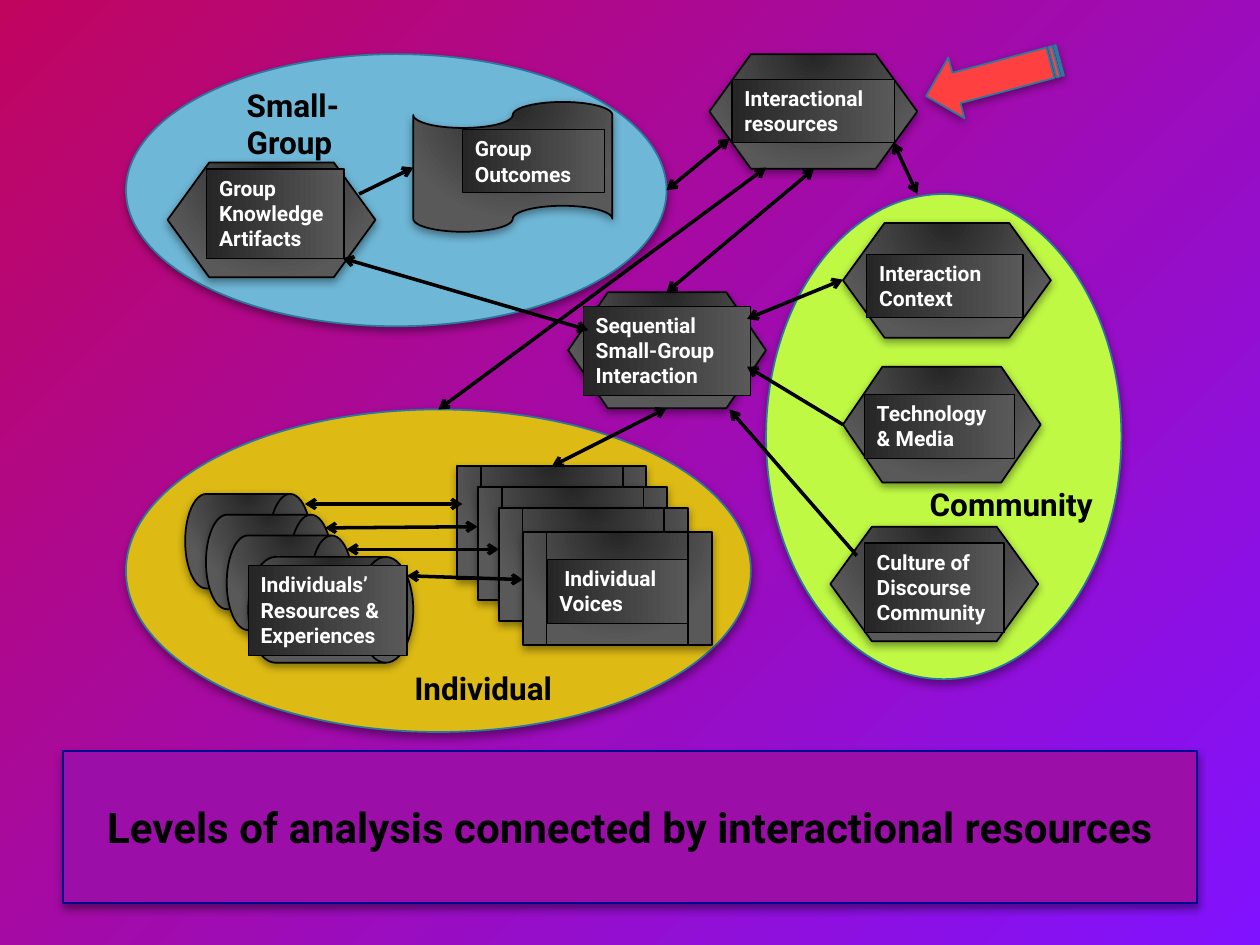
from dataclasses import dataclass
from typing import NamedTuple

from lxml import etree
from pptx import Presentation
from pptx.dml.color import RGBColor
from pptx.enum.shapes import MSO_CONNECTOR, MSO_SHAPE
from pptx.enum.text import MSO_ANCHOR, MSO_AUTO_SIZE, PP_ALIGN
from pptx.oxml.ns import qn
from pptx.util import Inches, Pt

ELLIPSE = MSO_SHAPE.OVAL
RECT = MSO_SHAPE.RECTANGLE
DRUM = MSO_SHAPE.FLOWCHART_DIRECT_ACCESS_STORAGE
PROCESS = MSO_SHAPE.FLOWCHART_PREDEFINED_PROCESS
HEXAGON = MSO_SHAPE.FLOWCHART_PREPARATION
TAPE = MSO_SHAPE.FLOWCHART_PUNCHED_TAPE
STRIPED_ARROW = MSO_SHAPE.STRIPED_RIGHT_ARROW
STRAIGHT = MSO_CONNECTOR.STRAIGHT

FONT = "Roboto"
BLACK, WHITE, TEAL = "000000", "FFFFFF", "287A9E"
DARK_GRAY, GRAY = "262626", "595959"


class Box(NamedTuple):
    left: float
    top: float
    width: float
    height: float


@dataclass
class Node:
    outline: int
    frame: Box
    label: Box
    paragraphs: list[str]
    first_indent: float = 0


@dataclass
class Link:
    start: tuple[float, float]
    end: tuple[float, float]
    both_ways: bool = True


LEVELS = [
    (Box(1, 3.25, 4.96, 2.56), "DDBB14"),
    (Box(6.08, 1.54, 2.82, 3.85), "BFF944"),
    (Box(1, 0.43, 4.29, 2.16), "6FB7D7"),
]
LEVEL_NAMES = [
    ("Community", Box(7.28, 3.8, 1.74, 0.4)),
    ("Small-Group", Box(1.86, 0.63, 1.56, 0.4)),
    ("Individual", Box(3.19, 5.26, 1.56, 0.4)),
]
# Cards behind the front drum and the front process box
STACKS = [
    (DRUM, Box(1.47, 3.92, 1, 0.75)),
    (PROCESS, Box(3.63, 3.7, 1.5, 0.9)),
]
STACK_SIZE, STACK_STEP = 3, 0.165
NODES = [
    Node(DRUM, Box(1.97, 4.42, 1.31, 0.84), Box(1.97, 4.49, 1.26, 0.71),
         ["Individuals’", "Resources &", "Experiences"]),
    Node(PROCESS, Box(4.15, 4.22, 1.5, 0.9), Box(4.34, 4.44, 1.12, 0.51),
         ["Individual", "Voices"], first_indent=0.04),
    Node(HEXAGON, Box(1.33, 1.29, 1.65, 0.91), Box(1.64, 1.34, 1.09, 0.71),
         ["Group", "Knowledge", "Artifacts"]),
    Node(HEXAGON, Box(4.51, 2.32, 1.57, 0.92), Box(4.63, 2.43, 1.33, 0.71),
         ["Sequential", "Small-Group", "Interaction"]),
    Node(HEXAGON, Box(5.63, 0.43, 1.65, 0.91), Box(5.81, 0.63, 1.29, 0.5),
         ["Interactional resources"]),
    Node(HEXAGON, Box(6.69, 1.77, 1.65, 0.91), Box(6.88, 2.02, 1.24, 0.5),
         ["Interaction", "Context"]),
    Node(HEXAGON, Box(6.59, 4.18, 1.65, 0.91), Box(6.86, 4.31, 1.11, 0.71),
         ["Culture of", "Discourse", "Community"]),
    Node(TAPE, Box(3.28, 0.81, 1.58, 1.03), Box(3.67, 1.03, 1.13, 0.5),
         ["Group Outcomes"]),
    Node(HEXAGON, Box(6.69, 2.91, 1.57, 0.92), Box(6.86, 3.13, 1.19, 0.51),
         ["Technology & Media"]),
]
LINKS = [
    Link((5.79, 1.1), (5.29, 1.51)),
    Link((3.67, 4), (2.42, 4)),
    Link((4.38, 3.7), (5.29, 3.24)),
    Link((2.85, 1.54), (3.28, 1.33), both_ways=False),
    Link((6.69, 3.37), (5.93, 2.91), both_ways=False),
    Link((6.8, 4.41), (5.79, 3.25), both_ways=False),
    Link((6.69, 2.22), (5.93, 2.53)),
    Link((6.46, 1.34), (5.29, 2.32)),
    Link((3.79, 4.18), (2.58, 4.19)),
    Link((3.96, 4.36), (2.75, 4.36)),
    Link((4.15, 4.6), (3.23, 4.57)),
    Link((2.72, 2.05), (4.67, 2.62)),
    Link((7.09, 1.13), (7.28, 1.54)),
    Link((6.08, 1.33), (3.48, 3.25)),
]


def rgb(color: str) -> RGBColor:
    return RGBColor.from_string(color)


def inches(values) -> list:
    return [Inches(value) for value in values]


def add_child(parent, tag: str, **attributes):
    return etree.SubElement(parent, qn(tag), attributes)


def set_gradient(fill, start: str, end: str) -> None:
    fill.gradient()
    fill.gradient_angle = 0
    for stop, color in zip(fill.gradient_stops, (start, end)):
        stop.color.rgb = rgb(color)


def make_radial(properties, left: int, top: int, right: int, bottom: int) -> None:
    gradient = properties.find(qn("a:gradFill"))
    linear = gradient.find(qn("a:lin"))
    radial = etree.Element(qn("a:path"), {"path": "circle"})
    add_child(radial, "a:fillToRect", l=str(left * 1000), t=str(top * 1000),
              r=str(right * 1000), b=str(bottom * 1000))
    gradient.replace(linear, radial)


def set_line(shape, color: str, width: float) -> None:
    shape.line.color.rgb = rgb(color)
    shape.line.width = Pt(width)


def add_shadow(shape) -> None:
    shape.shadow.inherit = False
    effects = shape._element.spPr.find(qn("a:effectLst"))
    shadow = add_child(effects, "a:outerShdw", blurRad=str(Pt(5)), dist=str(Pt(2)),
                       dir="5400000", rotWithShape="0")
    add_child(add_child(shadow, "a:srgbClr", val=BLACK), "a:alpha", val="40000")


def add_solid(slide, preset: int, box: Box, color: str):
    shape = slide.shapes.add_shape(preset, *inches(box))
    shape.fill.solid()
    shape.fill.fore_color.rgb = rgb(color)
    set_line(shape, TEAL, 1)
    add_shadow(shape)
    return shape


def add_card(slide, preset: int, box: Box) -> None:
    card = slide.shapes.add_shape(preset, *inches(box))
    set_gradient(card.fill, DARK_GRAY, GRAY)
    make_radial(card._element.spPr, 50, 0, 50, 100)
    set_line(card, BLACK, 1)
    add_shadow(card)


def write(shape, paragraphs: list[str], size: float, color: str, align=PP_ALIGN.LEFT) -> None:
    frame = shape.text_frame
    frame.word_wrap = True
    for index, text in enumerate(paragraphs):
        paragraph = frame.add_paragraph() if index else frame.paragraphs[0]
        paragraph.alignment = align
        run = paragraph.add_run()
        run.text = text
        run.font.name, run.font.size, run.font.bold = FONT, Pt(size), True
        run.font.color.rgb = rgb(color)


def fit_to_text(shape) -> None:
    shape.text_frame.vertical_anchor = MSO_ANCHOR.TOP
    shape.text_frame.auto_size = MSO_AUTO_SIZE.SHAPE_TO_FIT_TEXT


def add_node(slide, node: Node) -> None:
    add_card(slide, node.outline, node.frame)
    label = slide.shapes.add_shape(RECT, *inches(node.label))
    label.shadow.inherit = False
    set_gradient(label.fill, DARK_GRAY, GRAY)
    set_line(label, BLACK, 0.75)
    write(label, node.paragraphs, 12, WHITE)
    fit_to_text(label)
    if node.first_indent:
        first = label.text_frame.paragraphs[0]._p.get_or_add_pPr()
        first.set("indent", str(Inches(node.first_indent)))


def add_link(slide, link: Link) -> None:
    connector = slide.shapes.add_connector(STRAIGHT, *inches(link.start + link.end))
    set_line(connector, BLACK, 2)
    line = connector.line._get_or_add_ln()
    if link.both_ways:
        add_child(line, "a:headEnd", type="arrow")
    add_child(line, "a:tailEnd", type="arrow")
    add_child(connector._element.spPr, "a:effectLst")


def format_title(title) -> None:
    title.left, title.top, title.width, title.height = inches((0.5, 5.96, 9, 1.21))
    properties = title._element.spPr
    rounded = etree.Element(qn("a:prstGeom"), {"prst": "roundRect"})
    add_child(rounded, "a:avLst")
    properties.find(qn("a:xfrm")).addnext(rounded)
    title.fill.solid()
    title.fill.fore_color.rgb = rgb("9C0EA8")
    set_line(title, "000090", 1)
    add_shadow(title)
    write(title, ["Levels of analysis connected by interactional resources"], 24, BLACK,
          PP_ALIGN.CENTER)
    title.text_frame.vertical_anchor = MSO_ANCHOR.MIDDLE
    # Thin gray outline around the letters
    outline = etree.Element(qn("a:ln"), {"w": str(Pt(0.75))})
    add_child(add_child(outline, "a:solidFill"), "a:srgbClr", val=GRAY)
    title.text_frame.paragraphs[0].runs[0].font._element.insert(0, outline)


def main() -> None:
    deck = Presentation()
    deck.slide_width, deck.slide_height = Inches(10), Inches(7.5)
    slide = deck.slides.add_slide(deck.slide_layouts[5])

    # Background glowing from the bottom right corner
    set_gradient(slide.background.fill, "8112FF", "C0055F")
    make_radial(slide._element.cSld.bg.bgPr, 100, 100, 0, 0)
    format_title(slide.shapes.title)

    # Levels of analysis
    for box, color in LEVELS:
        add_solid(slide, ELLIPSE, box, color)

    # Stacked cards, then the labelled nodes
    for preset, box in STACKS:
        for index in range(STACK_SIZE):
            shift = index * STACK_STEP
            add_card(slide, preset, box._replace(left=box.left + shift, top=box.top + shift))
    for node in NODES:
        add_node(slide, node)

    # Links and level names
    for link in LINKS:
        add_link(slide, link)
    for name, box in LEVEL_NAMES:
        level_name = slide.shapes.add_textbox(*inches(box))
        write(level_name, [name], 18, BLACK)
        fit_to_text(level_name)

    # Pointer to the interactional resources
    pointer = add_solid(slide, STRIPED_ARROW, Box(7.33, 0.37, 1.1, 0.5), "FF4040")
    pointer.rotation = 165

    deck.save("out.pptx")


if __name__ == "__main__":
    main()
